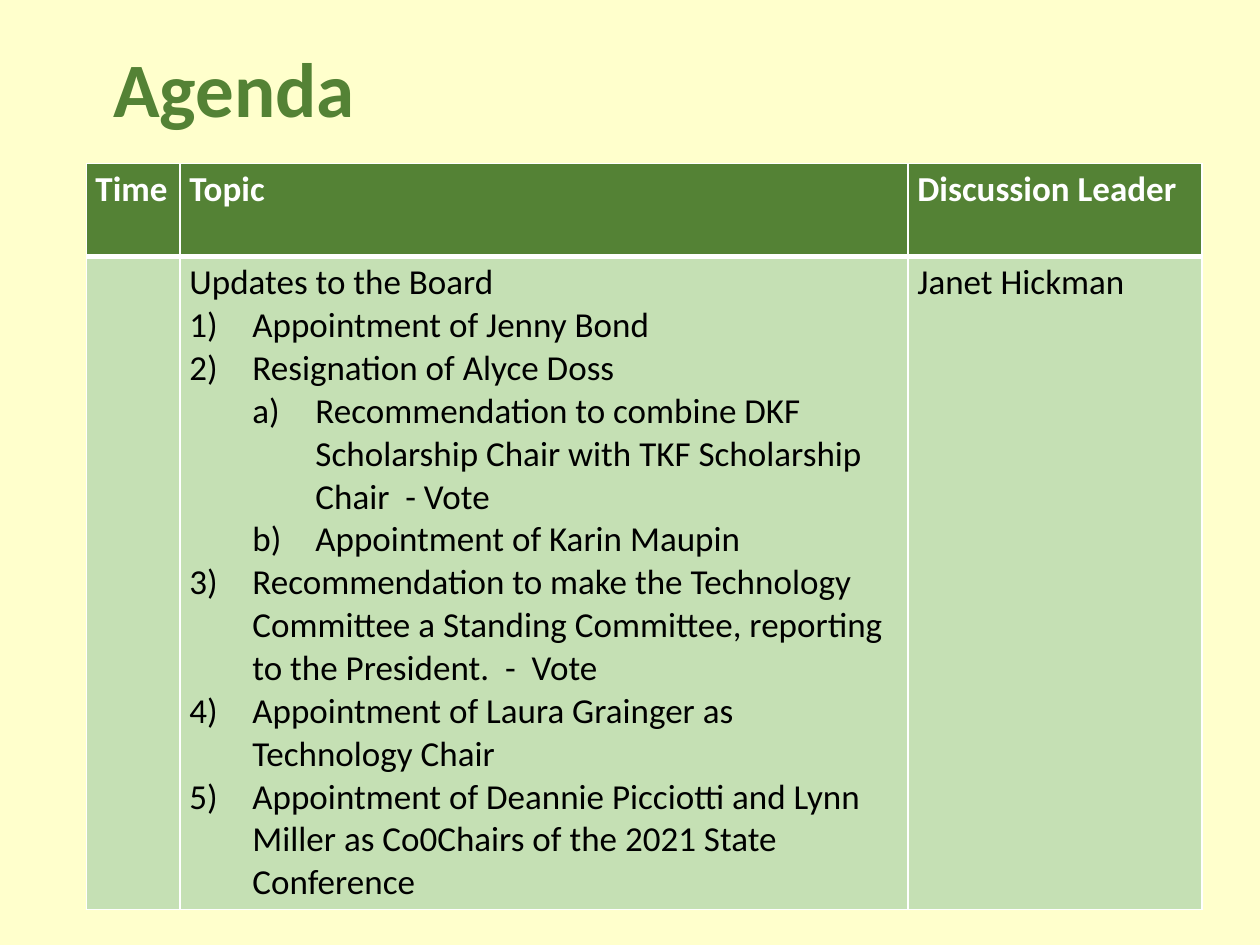
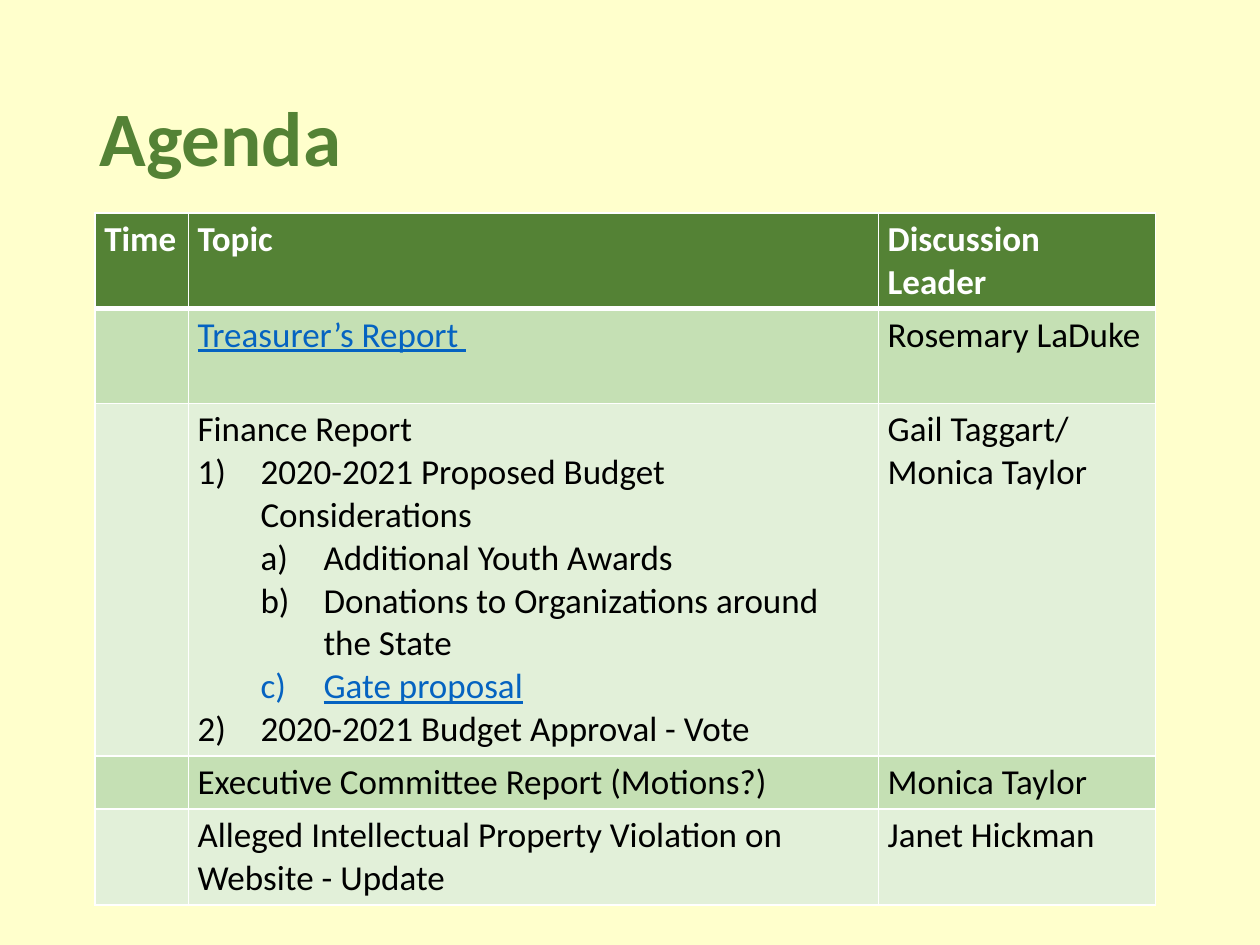
from lxml import etree
from pptx import Presentation
from pptx.dml.color import RGBColor
from pptx.enum import text
from pptx.oxml import ns
from pptx.util import Pt

COLOURS = {
    "background": "FFFFCC",
    "green": "548235",
    "band_dark": "C5E0B4",
    "band_light": "E2F0D9",
    "white": "FFFFFF",
    "black": "000000",
    "link": "0563C1",
}
FONT = "Calibri"
HEADERS = ("Time", "Topic", "Discussion Leader")
NUMBERING = {1: "arabicParenR", 2: "alphaLcParenR"}
LINK = {"colour": "link", "underline": True}


def colour_of(name):
    return RGBColor.from_string(COLOURS[name])


def write(paragraph, words, size=20, colour="black", bold=False, underline=False):
    """Add one formatted run to a paragraph."""
    run = paragraph.add_run()
    run.text = words
    font = run.font
    font.name, font.size = FONT, Pt(size)
    font.bold, font.underline = bold, underline
    font.color.rgb = colour_of(colour)


class Deck:
    INDENT = 36

    def __init__(self):
        self.presentation = Presentation()
        self.presentation.slide_width = Pt(720)
        self.presentation.slide_height = Pt(540)
        self.slide = None

    def add_slide(self):
        layout = self.presentation.slide_layouts.get_by_name("Title Only")
        self.slide = self.presentation.slides.add_slide(layout)
        fill = self.slide.background.fill
        fill.solid()
        fill.fore_color.rgb = colour_of("background")

    def title(self, words, left, top, width, height):
        shape = self.slide.shapes.title
        shape.left, shape.top = Pt(left), Pt(top)
        shape.width, shape.height = Pt(width), Pt(height)
        frame = shape.text_frame
        frame.auto_size = text.MSO_AUTO_SIZE.NONE
        frame.vertical_anchor = text.MSO_ANCHOR.MIDDLE
        paragraph = frame.paragraphs[0]
        paragraph.alignment = text.PP_ALIGN.LEFT
        paragraph.line_spacing = 0.9
        write(paragraph, words, size=44, colour="green", bold=True)

    def number(self, paragraph, level):
        """Number a paragraph 1) at level 1 or a) at level 2."""
        paragraph.level = level - 1
        properties = paragraph._p.get_or_add_pPr()
        properties.set("marL", str(Pt(self.INDENT * level)))
        properties.set("indent", str(-Pt(self.INDENT)))
        bullet = etree.SubElement(properties, ns.qn("a:buAutoNum"))
        bullet.set("type", NUMBERING[level])

    def borders(self, cell, **widths):
        properties = cell._tc.get_or_add_tcPr()
        for side in "LRTB":
            line = etree.SubElement(properties, ns.qn(f"a:ln{side}"))
            line.set("w", str(Pt(widths.get(side, 1))))
            fill = etree.SubElement(line, ns.qn("a:solidFill"))
            etree.SubElement(fill, ns.qn("a:srgbClr")).set("val", COLOURS["white"])

    def cell(self, cell, entries, fill, **style):
        """Fill a cell with (level, words, optional format) entries."""
        cell.margin_left = cell.margin_right = Pt(5.3)
        cell.margin_top = cell.margin_bottom = Pt(2.88)
        cell.fill.solid()
        cell.fill.fore_color.rgb = colour_of(fill)
        frame = cell.text_frame
        for index, (level, words, *special) in enumerate(entries):
            paragraph = frame.add_paragraph() if index else frame.paragraphs[0]
            if level:
                self.number(paragraph, level)
            write(paragraph, words, **(special[0] if special else style))

    def agenda_table(self, left, top, widths, heights, topics):
        """Draw the header row, then one banded row per (topic, leader) pair."""
        shape = self.slide.shapes.add_table(
            len(heights), len(widths), Pt(left), Pt(top), Pt(sum(widths)), Pt(sum(heights)))
        table = shape.table
        table.first_row = table.horz_banding = False
        for column, width in zip(table.columns, widths):
            column.width = Pt(width)
        for row, height in zip(table.rows, heights):
            row.height = Pt(height)

        for column, header in enumerate(HEADERS):
            cell = table.cell(0, column)
            self.borders(cell, B=3)
            self.cell(cell, [(0, header)], "green", colour="white", bold=True)
        for row, (topic, leader) in enumerate(topics, 1):
            band = "band_dark" if row % 2 else "band_light"
            for column, entries in enumerate(([], topic, leader)):
                cell = table.cell(row, column)
                self.borders(cell, T=3 if row == 1 else 1)
                self.cell(cell, entries, band)


def main():
    deck = Deck()

    # Board updates
    deck.add_slide()
    deck.title("Agenda", 57.6, 18.7, 620.6, 68.4)
    board_updates = [
        (0, "Updates to the Board"),
        (1, "Appointment of Jenny Bond"),
        (1, "Resignation of Alyce Doss"),
        (2, "Recommendation to combine DKF Scholarship Chair with TKF Scholarship Chair  - Vote"),
        (2, "Appointment of Karin Maupin"),
        (1, "Recommendation to make the Technology Committee a Standing Committee, "
            "reporting to the President.  -  Vote"),
        (1, "Appointment of Laura Grainger as Technology Chair"),
        (1, "Appointment of Deannie Picciotti and Lynn Miller as Co0Chairs "
            "of the 2021 State Conference"),
    ]
    deck.agenda_table(49.3, 93.5, (53.7, 416, 168), (53, 372),
                      [(board_updates, [(0, "Janet Hickman")])])

    # Reports
    deck.add_slide()
    deck.title("Agenda", 49.7, 28.8, 620.6, 104.4)
    finance = [
        (0, "Finance Report"),
        (1, "2020-2021 Proposed Budget Considerations"),
        (2, "Additional Youth Awards"),
        (2, "Donations to Organizations around the State"),
        (2, "Gate proposal", LINK),
        (1, "2020-2021 Budget Approval - Vote"),
    ]
    deck.agenda_table(54.3, 121.7, (53.3, 394.4, 158.2), (54, 54, 201, 30, 54), [
        ([(0, "Treasurer’s Report ", LINK)], [(0, "Rosemary LaDuke")]),
        (finance, [(0, "Gail Taggart/"), (0, "Monica Taylor")]),
        ([(0, "Executive Committee Report (Motions?)")], [(0, "Monica Taylor")]),
        ([(0, "Alleged Intellectual Property Violation on Website - Update")],
         [(0, "Janet Hickman")]),
    ])

    deck.presentation.save("out.pptx")


if __name__ == "__main__":
    main()
